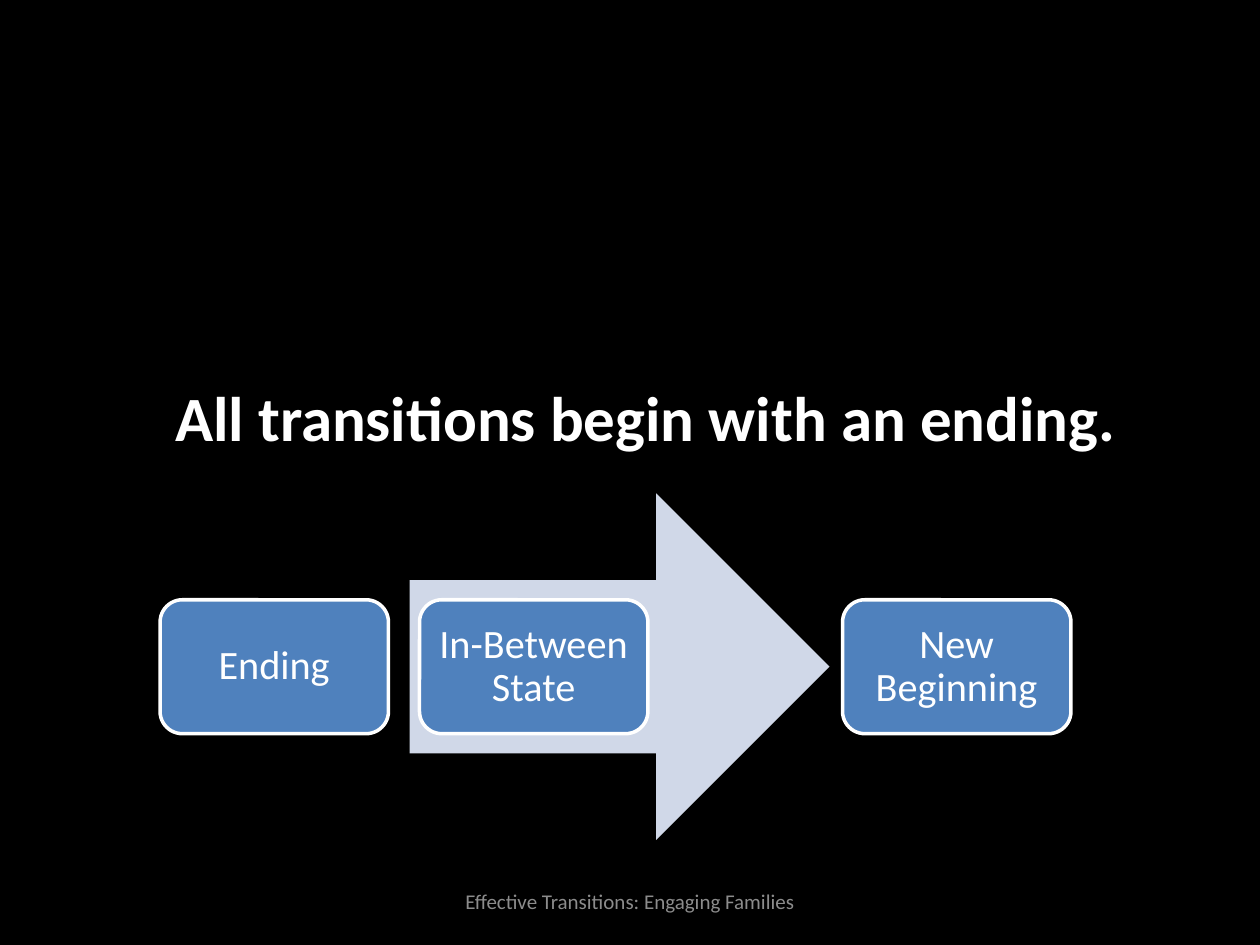
from dataclasses import dataclass

from pptx import Presentation
from pptx.dml.color import RGBColor
from pptx.enum.shapes import MSO_SHAPE
from pptx.enum.text import MSO_ANCHOR, PP_ALIGN
from pptx.util import Pt


@dataclass(frozen=True)
class Theme:
    font: str = "Calibri"
    background: str = "000000"
    text: str = "FFFFFF"
    muted: str = "8C8C8C"
    stage: str = "4F81BD"
    arrow: str = "D0D8E8"
    title_size: int = 36
    stage_size: int = 23
    footer_size: int = 12
    border: int = 2


THEME = Theme()


def set_attrs(obj, formats):
    for name, value in formats.items():
        setattr(obj, name, value)


def paint(fill, color):
    fill.solid()
    fill.fore_color.rgb = RGBColor.from_string(color)


def write(sp, text, size, color, bold=False, frame=None, para=None):
    tf = sp.text_frame
    set_attrs(tf, {"word_wrap": True, **(frame or {})})
    p = tf.paragraphs[0]
    set_attrs(p, {"alignment": PP_ALIGN.CENTER, **(para or {})})
    r = p.add_run()
    r.text = text
    set_attrs(r.font, {"name": THEME.font, "size": Pt(size), "bold": bold})
    r.font.color.rgb = RGBColor.from_string(color)


def add_label(s, box, text, size, color, bold=False, anchor=MSO_ANCHOR.TOP):
    sp = s.shapes.add_textbox(*map(Pt, box))
    write(sp, text, size, color, bold, {"vertical_anchor": anchor})


def add_block(s, kind, box, color):
    sp = s.shapes.add_shape(kind, *map(Pt, box))
    sp.shadow.inherit = False
    paint(sp.fill, color)
    sp.line.fill.background()
    return sp


def add_stage(s, box, text):
    sp = add_block(s, MSO_SHAPE.ROUNDED_RECTANGLE, box, THEME.stage)
    paint(sp.line.fill, THEME.text)
    sp.line.width = Pt(THEME.border)
    sides = ("left", "right", "top", "bottom")
    frame = {f"margin_{side}": Pt(7) for side in sides}
    frame["vertical_anchor"] = MSO_ANCHOR.MIDDLE
    write(sp, text, THEME.stage_size, THEME.text, frame=frame,
          para={"line_spacing": 0.9})


def add_process(s, box):
    x, y, w, h = box
    add_block(s, MSO_SHAPE.RIGHT_ARROW, (x + 142.5, y, 240, h), THEME.arrow)
    stage_w, stage_h = 130.5, 76.5
    top = y + (h - stage_h) / 2
    stages = {
        "Ending": 0,
        "In-Between State": 148.25,
        "New Beginning": w - stage_w,
    }
    for text, offset in stages.items():
        add_stage(s, (x + offset, top, stage_w, stage_h), text)


def main():
    prs = Presentation()
    set_attrs(prs, {"slide_width": Pt(720), "slide_height": Pt(540)})
    s = prs.slides.add_slide(prs.slide_layouts[6])
    paint(s.background.fill, THEME.background)
    add_label(s, (84, 213, 570, 51), "All transitions begin with an ending.",
              THEME.title_size, THEME.text, bold=True)
    add_process(s, (91.5, 282, 520.5, 198))
    add_label(s, (246, 500.5, 228, 28.75),
              "Effective Transitions: Engaging Families",
              THEME.footer_size, THEME.muted, anchor=MSO_ANCHOR.MIDDLE)
    prs.save("out.pptx")


if __name__ == "__main__":
    main()
